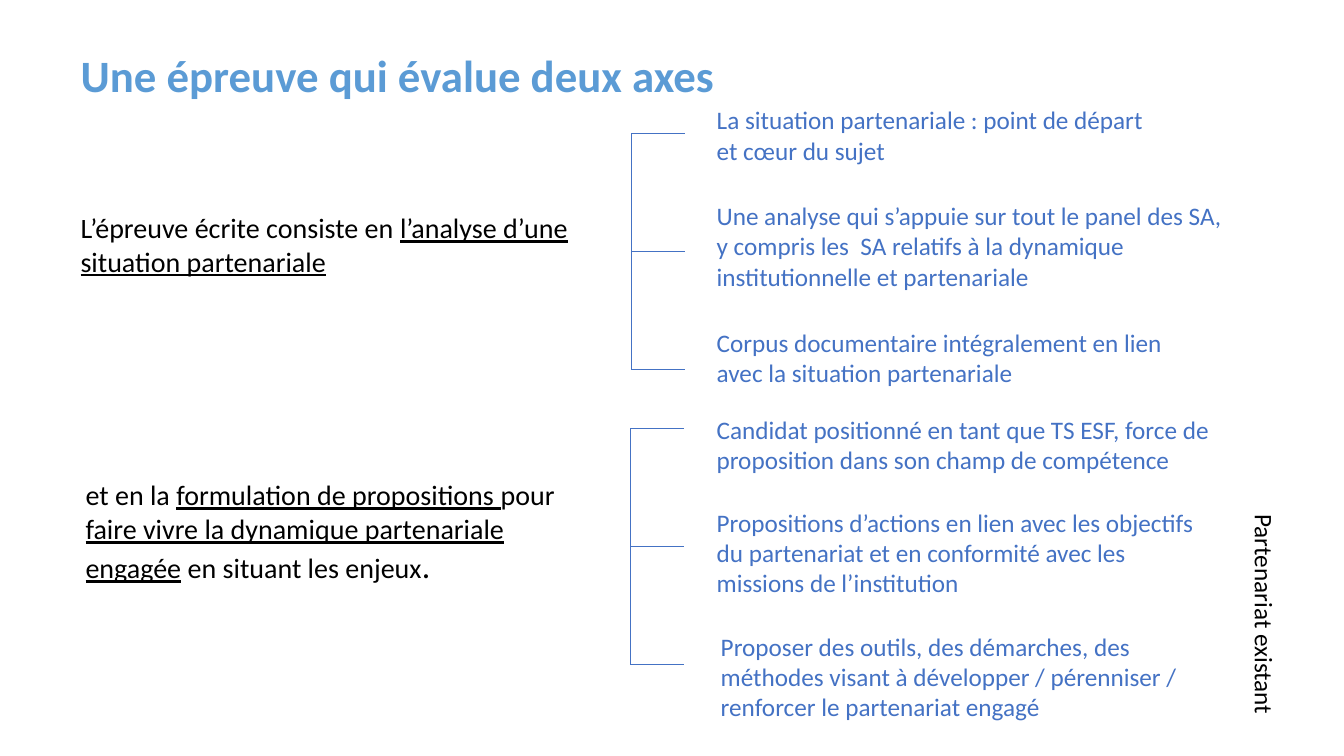
import pptx
import pptx.util
import pptx.dml.color
import pptx.enum.shapes
import pptx.enum.text
import pptx.oxml.ns
import lxml.etree

Inches = pptx.util.Inches
COLORS = {"title": "5B9BD5", "accent": "4472C4", "text": "000000"}


def write(paragraph, text, *, size=18, color="text", bold=False, underline=False):
    run = paragraph.add_run()
    run.text = text
    run.font.name = "Calibri"
    run.font.size = pptx.util.Pt(size)
    run.font.bold = bold
    run.font.underline = underline
    run.font.color.rgb = pptx.dml.color.RGBColor.from_string(COLORS[color])


class AxesSlide:
    def __init__(self, deck):
        self.slide = deck.slides.add_slide(deck.slide_layouts[5])

    def title(self, text, left, top, width, height):
        heading = self.slide.shapes.title
        heading.left, heading.top = Inches(left), Inches(top)
        heading.width, heading.height = Inches(width), Inches(height)
        frame = heading.text_frame
        frame.auto_size = pptx.enum.text.MSO_AUTO_SIZE.NONE
        frame.vertical_anchor = pptx.enum.text.MSO_ANCHOR.MIDDLE
        line = frame.paragraphs[0]
        line.alignment = pptx.enum.text.PP_ALIGN.LEFT
        line.line_spacing = 0.9
        write(line, text, size=32, color="title", bold=True)

    def text(self, runs, left, top, width, height, rotation=0, **style):
        box = self.slide.shapes.add_textbox(
            Inches(left), Inches(top), Inches(width), Inches(height))
        box.rotation = rotation
        frame = box.text_frame
        frame.word_wrap = True
        frame.auto_size = pptx.enum.text.MSO_AUTO_SIZE.SHAPE_TO_FIT_TEXT
        for words, emphasis in runs:
            write(frame.paragraphs[0], words, **{**style, **emphasis})

    def line(self, x1, y1, x2, y2):
        rule = self.slide.shapes.add_connector(
            pptx.enum.shapes.MSO_CONNECTOR.STRAIGHT,
            Inches(x1), Inches(y1), Inches(x2), Inches(y2))
        rule.line.width = pptx.util.Pt(0.5)
        rule.line.color.rgb = pptx.dml.color.RGBColor.from_string(COLORS["accent"])
        lxml.etree.SubElement(rule._element.spPr, pptx.oxml.ns.qn("a:effectLst"))

    def bracket(self, left, top, branch=0.53, gap=1.17, count=3):
        self.line(left, top, left, top + gap * (count - 1))
        for row in range(count):
            self.line(left, top + gap * row, left + branch, top + gap * row)


def main():
    deck = pptx.Presentation()
    deck.slide_width, deck.slide_height = Inches(13.33), Inches(7.5)
    page = AxesSlide(deck)
    page.title("Une épreuve qui évalue deux axes", 0.7, 0.4, 11.66, 0.74)

    # The two axes on the left
    underlined = {"underline": True}
    page.text([("L’épreuve écrite consiste en ", {}),
               ("l’analyse d’une situation partenariale", underlined)],
              0.7, 2.04, 5.29, 0.77, size=20)
    page.text([("et en la ", {}),
               ("formulation de propositions ", underlined),
               ("pour ", {}),
               ("faire vivre la dynamique partenariale engagée", underlined),
               (" en situant les enjeux", {}),
               (".", {"size": 24})],
              0.75, 4.69, 5.08, 1.48, size=20)

    # Brackets joining each axis to its three points
    page.bracket(6.26, 1.32)
    page.bracket(6.25, 4.25)

    # Points on the right: left, top, width, height, wording
    points = [
        (7.01, 0.99, 4.58, 0.71,
         "La situation partenariale : point de départ et cœur du sujet"),
        (7.01, 1.94, 5.34, 1.01,
         "Une analyse qui s’appuie sur tout le panel des SA, y compris les  SA "
         "relatifs à la dynamique institutionnelle et partenariale"),
        (7.01, 3.2, 5.12, 0.71,
         "Corpus documentaire intégralement en lien avec la situation partenariale"),
        (7.01, 4.06, 5.34, 0.71,
         "Candidat positionné en tant que TS ESF, force de proposition dans son "
         "champ de compétence"),
        (7.01, 4.98, 5.06, 1.01,
         "Propositions d’actions en lien avec les objectifs du partenariat et en "
         "conformité avec les missions de l’institution"),
        (7.05, 6.21, 5.19, 1.01,
         "Proposer des outils, des démarches, des méthodes visant à développer / "
         "pérenniser / renforcer le partenariat engagé"),
    ]
    for *place, wording in points:
        page.text([(wording, {})], *place, color="accent")

    # Vertical label at the right edge
    page.text([("Partenariat existant", {})], 11.3, 6.05, 2.49, 0.4, rotation=90)

    deck.save("out.pptx")


if __name__ == "__main__":
    main()
